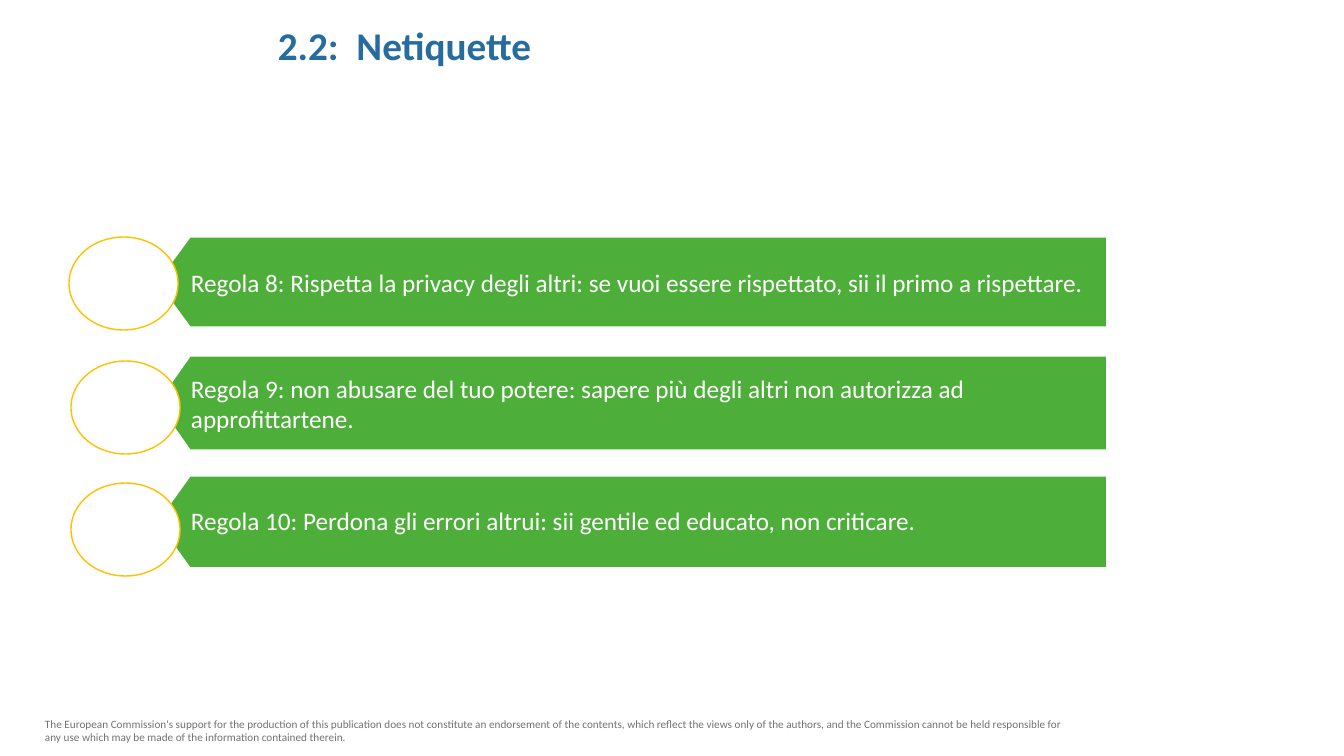
from pptx import Presentation
from pptx.dml.color import RGBColor
from pptx.enum.shapes import MSO_SHAPE
from pptx.enum.text import MSO_ANCHOR, PP_ALIGN
from pptx.util import Pt

PX = 914400 / 100.8  # EMU in one px

BLUE, GREEN, YELLOW = "266C9F", "4EAE3A", "FFC000"
GREY, WHITE = "767171", "FFFFFF"

BAR_LEFT, BAR_RIGHT, POINT_WIDTH = 157, 1107, 33
DISC_WIDTH, DISC_HEIGHT = 109, 93

# text, bar top, bar height, line spacing, disc left, disc top
RULES = [
    ("Regola 8: Rispetta la privacy degli altri: se vuoi essere rispettato, "
     "sii il primo a rispettare.", 237, 90, 1.0, 69, 237),
    ("Regola 9: non abusare del tuo potere: sapere più degli altri non "
     "autorizza ad approfittartene.", 356, 94, 1.0, 71, 361),
    ("Regola 10: Perdona gli errori altrui: sii gentile ed educato, "
     "non criticare.", 476, 92, 0.9, 71, 483),
]
DISCLAIMER = (
    "The European Commission's support for the production of this publication "
    "does not constitute an endorsement of the contents, which reflect the views "
    "only of the authors, and the Commission cannot be held responsible for any "
    "use which may be made of the information contained therein."
)


def px(length):
    return round(length * PX)


def color(hex_code):
    return RGBColor.from_string(hex_code)


def write(frame, text, size, hex_code, bold=False, align=PP_ALIGN.LEFT, spacing=1.0):
    frame.word_wrap = True
    paragraph = frame.paragraphs[0]
    paragraph.alignment = align
    paragraph.line_spacing = spacing
    run = paragraph.add_run()
    run.text = text
    run.font.name = "Calibri"
    run.font.size = Pt(size)
    run.font.bold = bold
    run.font.color.rgb = color(hex_code)


def add_label(slide, left, top, width, height, text, size, hex_code, **style):
    label = slide.shapes.add_textbox(px(left), px(top), px(width), px(height))
    write(label.text_frame, text, size, hex_code, **style)


def paint(shape, fill, line):
    shape.shadow.inherit = False
    shape.fill.solid()
    shape.fill.fore_color.rgb = color(fill)
    shape.line.color.rgb = color(line)
    shape.line.width = Pt(1)


def add_rule_bar(slide, top, height, text, spacing):
    bottom, shoulder = top + height, BAR_LEFT + POINT_WIDTH
    outline = slide.shapes.build_freeform(BAR_RIGHT, bottom, scale=PX)
    outline.add_line_segments([
        (shoulder, bottom),
        (BAR_LEFT, top + height / 2),
        (shoulder, top),
        (BAR_RIGHT, top),
    ], close=True)
    bar = outline.convert_to_shape()
    paint(bar, GREEN, WHITE)
    frame = bar.text_frame
    frame.vertical_anchor = MSO_ANCHOR.MIDDLE
    frame.margin_left, frame.margin_right = px(34), px(9)
    frame.margin_top = frame.margin_bottom = px(5)
    write(frame, text, 18, WHITE, spacing=spacing)


def add_disc(slide, left, top):
    disc = slide.shapes.add_shape(
        MSO_SHAPE.OVAL, px(left), px(top), px(DISC_WIDTH), px(DISC_HEIGHT))
    paint(disc, WHITE, YELLOW)


def main():
    deck = Presentation()
    deck.slide_width, deck.slide_height = px(1344), px(756)
    slide = deck.slides.add_slide(deck.slide_layouts[6])

    # Footer and title
    add_label(slide, 35, 712, 1054, 37, DISCLAIMER, 8, GREY)
    add_label(slide, 268, 9, 404, 107, "2.2:  Netiquette", 28, BLUE,
              bold=True, align=PP_ALIGN.JUSTIFY, spacing=1.15)

    # Rules, each with its disc over the pointed end
    for text, bar_top, bar_height, spacing, disc_left, disc_top in RULES:
        add_rule_bar(slide, bar_top, bar_height, text, spacing)
        add_disc(slide, disc_left, disc_top)

    deck.save("out.pptx")


if __name__ == "__main__":
    main()
